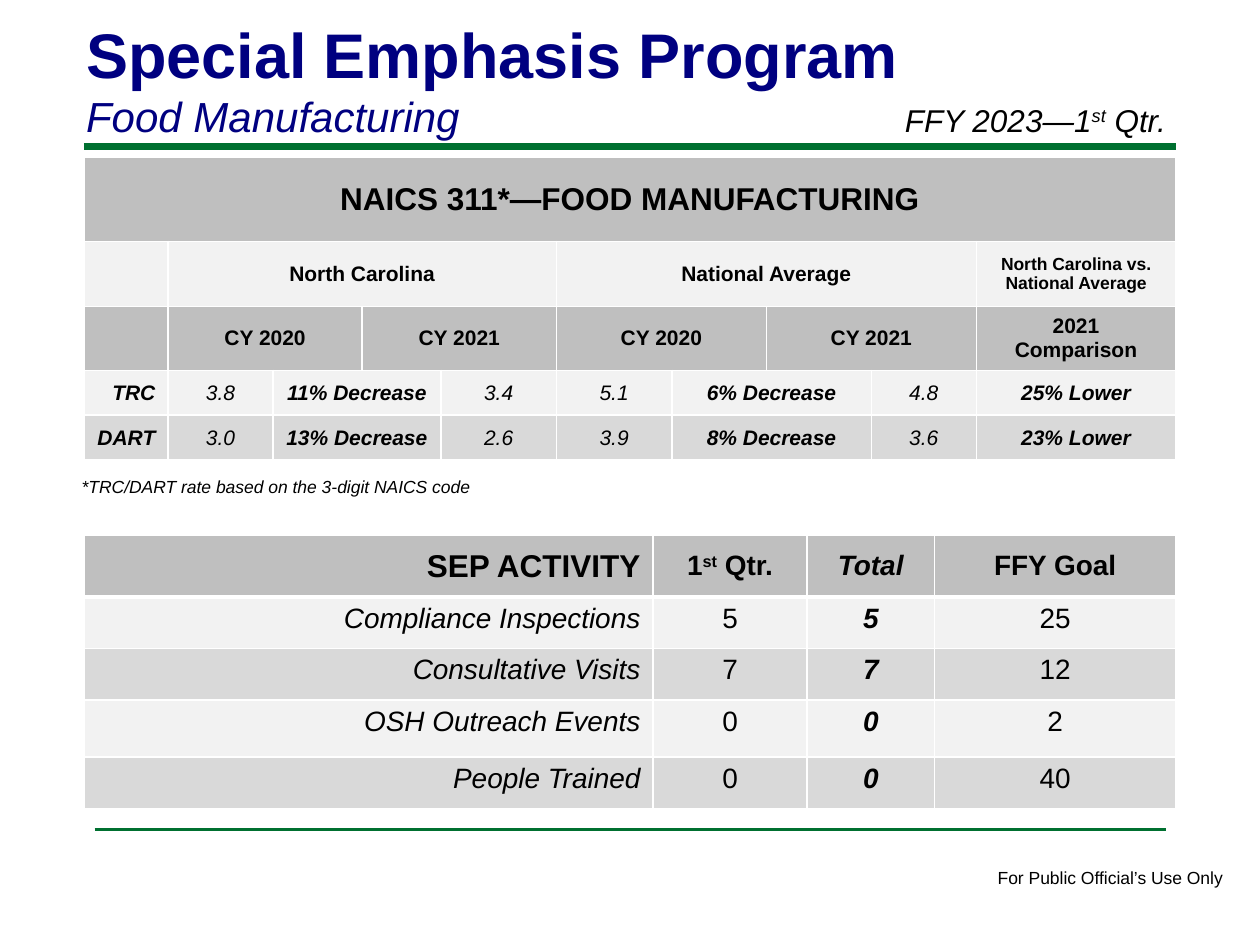
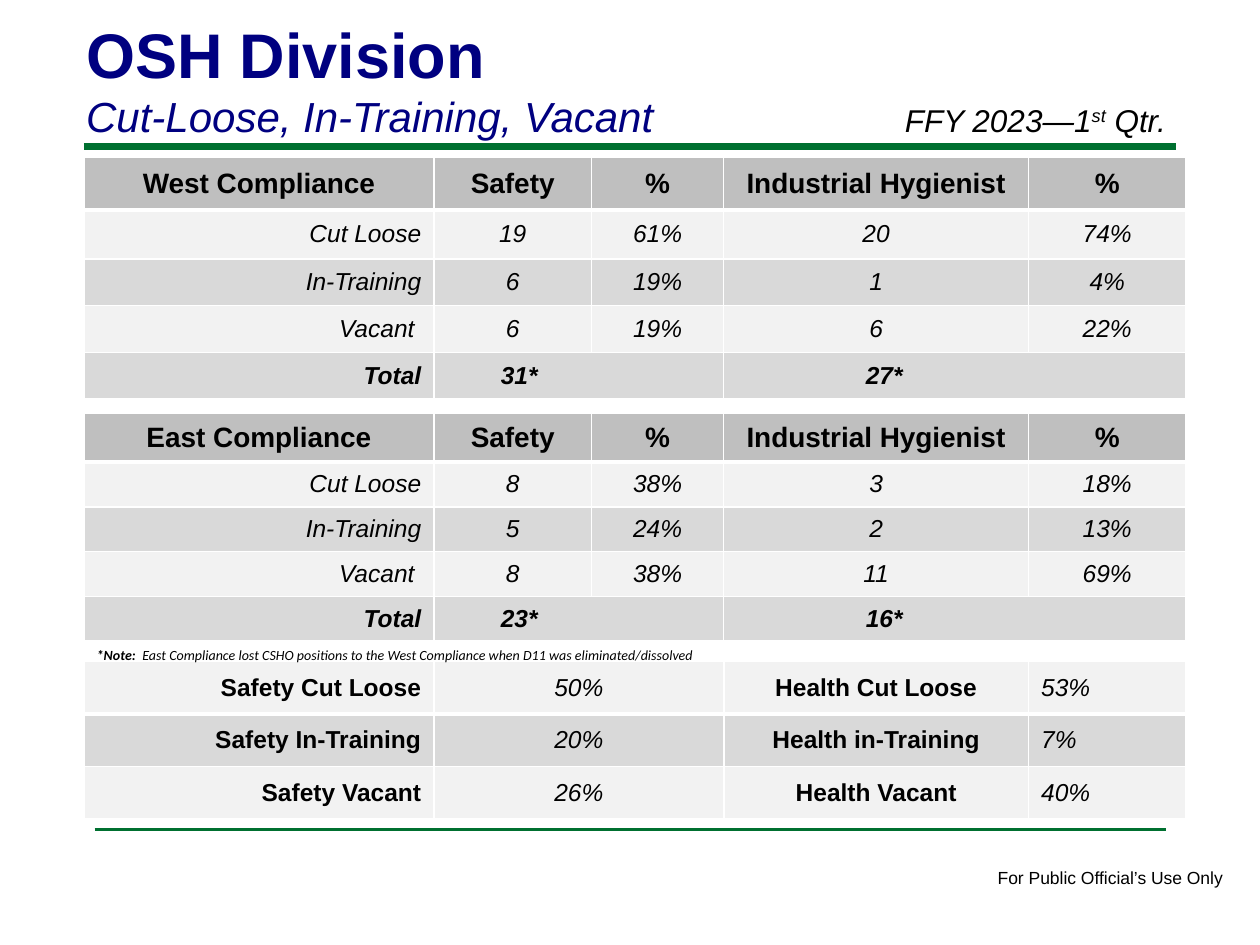
from dataclasses import dataclass
from typing import Optional

import lxml.etree
import pptx
import pptx.dml.color
import pptx.enum.shapes
import pptx.enum.text
import pptx.oxml.ns
import pptx.presentation
import pptx.shapes.connector
import pptx.slide
import pptx.table
import pptx.text.text
import pptx.util

Pt = pptx.util.Pt
ALIGN = pptx.enum.text.PP_ALIGN
ANCHOR = pptx.enum.text.MSO_ANCHOR
qn = pptx.oxml.ns.qn

COLORS = {
    "navy": "000080",
    "green": "007030",
    "black": "000000",
    "white": "FFFFFF",
    "header": "BFBFBF",
    "light": "F2F2F2",
    "mid": "D9D9D9",
}
BODY_FONT = "Arial"
NOTE_FONT = "Calibri"
TABLE_LEFT = 48
CELL_INSET = 7.2


@dataclass(frozen=True)
class Style:
    size: float
    bold: bool = False
    italic: bool = False
    color: str = "black"
    font: str = BODY_FONT


@dataclass(frozen=True)
class Rule:
    left: float
    right: float
    y: float
    width: float


@dataclass(frozen=True)
class Label:
    left: float
    top: float
    width: float
    height: float
    pieces: list[tuple[str, Style]]
    wrap: bool = False


@dataclass(frozen=True)
class Cell:
    text: str
    style: Style
    align: Optional[ALIGN] = ALIGN.CENTER
    span: int = 1
    indent: float = 0
    anchor: ANCHOR = ANCHOR.MIDDLE


@dataclass(frozen=True)
class Grid:
    top: float
    columns: list[float]
    heights: list[float]
    fills: list[str]
    rows: list[list[Cell]]
    heavy_first_row: bool = True


RULES = [Rule(48, 672, 84, 4), Rule(54, 666, 474, 2)]
SHARED_LABELS = [
    Label(563, 492, 145, 19.4, [("For Public Official’s Use Only", Style(10))]),
    Label(510, 54, 180, 29, [("FFY 2023—1^st^ Qtr.", Style(18, italic=True))], True),
]
TITLE = Style(36, bold=True, color="navy")
SUBTITLE = Style(24, italic=True, color="navy")


def rgb(name: str) -> pptx.dml.color.RGBColor:
    return pptx.dml.color.RGBColor.from_string(COLORS[name])


def add_text(paragraph: pptx.text.text._Paragraph, text: str, style: Style) -> None:
    for index, part in enumerate(text.split("^")):
        run = paragraph.add_run()
        run.text = part
        run.font.name = style.font
        run.font.size = Pt(style.size)
        run.font.bold = style.bold
        run.font.italic = style.italic
        run.font.color.rgb = rgb(style.color)
        if index % 2:
            run._r.get_or_add_rPr().set("baseline", "30000")


def add_rule(slide: pptx.slide.Slide, rule: Rule) -> None:
    connector = slide.shapes.add_connector(
        pptx.enum.shapes.MSO_CONNECTOR.STRAIGHT,
        Pt(rule.left), Pt(rule.y), Pt(rule.right), Pt(rule.y),
    )
    connector.line.color.rgb = rgb("green")
    connector.line.width = Pt(rule.width)
    lxml.etree.SubElement(connector._element.spPr, qn("a:effectLst"))


def add_label(slide: pptx.slide.Slide, label: Label) -> None:
    shape = slide.shapes.add_textbox(
        Pt(label.left), Pt(label.top), Pt(label.width), Pt(label.height)
    )
    shape.text_frame.word_wrap = label.wrap
    for text, style in label.pieces:
        add_text(shape.text_frame.paragraphs[0], text, style)


def set_borders(cell: pptx.table._Cell, widths: dict[str, float]) -> None:
    properties = cell._tc.get_or_add_tcPr()
    for position, (side, width) in enumerate(widths.items()):
        line = lxml.etree.Element(qn(f"a:{side}"), w=str(Pt(width)))
        fill = lxml.etree.SubElement(line, qn("a:solidFill"))
        lxml.etree.SubElement(fill, qn("a:srgbClr"), val=COLORS["white"])
        properties.insert(position, line)


def fill_cell(cell: pptx.table._Cell, content: Cell) -> None:
    cell.vertical_anchor = content.anchor
    cell.margin_left = Pt(CELL_INSET + content.indent)
    paragraph = cell.text_frame.paragraphs[0]
    paragraph.alignment = content.align
    if content.text:
        add_text(paragraph, content.text, content.style)


def add_grid(slide: pptx.slide.Slide, grid: Grid) -> None:
    frame = slide.shapes.add_table(
        len(grid.heights), len(grid.columns), Pt(TABLE_LEFT), Pt(grid.top),
        Pt(sum(grid.columns)), Pt(sum(grid.heights)),
    )
    table = frame.table
    table.first_row = grid.heavy_first_row
    for column, width in zip(table.columns, grid.columns):
        column.width = Pt(width)
    for row_index, contents in enumerate(grid.rows):
        table.rows[row_index].height = Pt(grid.heights[row_index])
        top = 3 if grid.heavy_first_row and row_index == 1 else 1
        bottom = 3 if grid.heavy_first_row and row_index == 0 else 1
        for cell in table.rows[row_index].cells:
            cell.fill.solid()
            cell.fill.fore_color.rgb = rgb(grid.fills[row_index])
            set_borders(cell, {"lnL": 1, "lnR": 1, "lnT": top, "lnB": bottom})
        column_index = 0
        for content in contents:
            cell = table.cell(row_index, column_index)
            fill_cell(cell, content)
            column_index += content.span
            if content.span > 1:
                cell.merge(table.cell(row_index, column_index - 1))
        for cell in table.rows[row_index].cells:
            if not cell.text:
                paragraph = cell.text_frame.paragraphs[0]
                lxml.etree.SubElement(paragraph._p, qn("a:endParaRPr"), sz="1200")


def add_report_slide(
    presentation: pptx.presentation.Presentation,
    heading: str, subject: str, grids: list[Grid], labels: list[Label],
) -> None:
    slide = presentation.slides.add_slide(presentation.slide_layouts[5])
    for rule in RULES:
        add_rule(slide, rule)
    title = slide.shapes.title
    title.left, title.top, title.width, title.height = Pt(42), Pt(4.3), Pt(594), Pt(80)
    frame = title.text_frame
    frame.auto_size = pptx.enum.text.MSO_AUTO_SIZE.NONE
    frame.vertical_anchor = ANCHOR.BOTTOM
    paragraphs = [frame.paragraphs[0], frame.add_paragraph()]
    for paragraph, text, style in zip(paragraphs, (heading, subject), (TITLE, SUBTITLE)):
        paragraph.alignment = ALIGN.LEFT
        add_text(paragraph, text, style)
    for grid in grids:
        add_grid(slide, grid)
    for label in SHARED_LABELS + labels:
        add_label(slide, label)


def rates_grid() -> Grid:
    bold = Style(12, bold=True)
    strong = Style(12, bold=True, italic=True)
    plain = Style(12, italic=True)
    blank = Cell("", bold)

    def rate_row(name: str, state: list[str], nation: list[str], comparison: str) -> list[Cell]:
        row = [Cell(name, strong, ALIGN.RIGHT)]
        for before, change, after in (state, nation):
            row += [Cell(before, plain), Cell(change, strong, span=2), Cell(after, plain)]
        return row + [Cell(comparison, strong)]

    years = [Cell(year, bold, span=2) for year in ("CY 2020", "CY 2021")]
    rows = [
        [Cell("NAICS 311*—FOOD MANUFACTURING", Style(18, bold=True), span=10)],
        [
            blank,
            Cell("North Carolina", bold, span=4),
            Cell("National Average", bold, span=4),
            Cell("North Carolina vs. National Average", Style(10, bold=True)),
        ],
        [blank, *years, *years, Cell("2021 Comparison", bold)],
        rate_row("TRC", ["3.8", "11% Decrease", "3.4"], ["5.1", "6% Decrease", "4.8"], "25% Lower"),
        rate_row("DART", ["3.0", "13% Decrease", "2.6"], ["3.9", "8% Decrease", "3.6"], "23% Lower"),
    ]
    return Grid(
        90, [48, 60, 51, 45, 66, 66, 54, 60, 60, 114], [48, 37.2, 36.4, 25.7, 25.7],
        ["header", "light", "header", "light", "mid"], rows, heavy_first_row=False,
    )


def activity_grid() -> Grid:
    bold = Style(16, bold=True)
    strong = Style(16, bold=True, italic=True)
    rows = [[
        Cell("SEP ACTIVITY", Style(18, bold=True), ALIGN.RIGHT),
        Cell("1^st^ Qtr.", bold), Cell("Total", strong), Cell("FFY Goal", bold),
    ]]
    for name, quarter, total, goal in (
        ("Compliance Inspections", "5", "5", "25"),
        ("Consultative Visits", "7", "7", "12"),
        ("OSH Outreach Events", "0", "0", "2"),
        ("People Trained", "0", "0", "40"),
    ):
        rows.append([
            Cell(name, Style(16, italic=True), ALIGN.RIGHT, anchor=ANCHOR.TOP),
            Cell(quarter, Style(16), anchor=ANCHOR.TOP),
            Cell(total, strong, anchor=ANCHOR.TOP),
            Cell(goal, Style(16), anchor=ANCHOR.TOP),
        ])
    return Grid(
        306, [325.2, 88, 72.8, 138], [35.1, 29.4, 29.4, 32.6, 29.4],
        ["header", "light", "mid", "light", "mid"], rows,
    )


def compliance_grid(
    region: str, top: float, heights: list[float], counts: list[list[str]], totals: list[str]
) -> Grid:
    plain = Style(14, italic=True)
    strong = Style(14, bold=True, italic=True)
    headings = [f"{region} Compliance", "Safety", "%", "Industrial Hygienist", "%"]
    rows = [[Cell(text, Style(16, bold=True)) for text in headings]]
    for name, values in zip(("Cut Loose", "In-Training", "Vacant "), counts):
        rows.append([Cell(name, plain, ALIGN.RIGHT)] + [Cell(value, plain) for value in values])
    rows.append([Cell("Total", strong, ALIGN.RIGHT)] + [
        Cell(total, strong, ALIGN.LEFT, 2, indent) for total, indent in zip(totals, (31, 74))
    ])
    return Grid(
        top, [200, 90, 75.6, 174.2, 90], heights,
        ["header", "light", "mid", "light", "mid"], rows,
    )


def share_grid() -> Grid:
    bold = Style(14, bold=True)
    plain = Style(14, italic=True)
    rows = [
        [
            Cell(f"Safety {safety_status}", bold, ALIGN.RIGHT), Cell(safety, plain),
            Cell(f"Health {health_status}", bold), Cell(health, plain, ALIGN.LEFT),
        ]
        for safety_status, safety, health_status, health in (
            ("Cut Loose", "50%", "Cut Loose", "53%"),
            ("In-Training", "20%", "in-Training", "7%"),
            ("Vacant", "26%", "Vacant", "40%"),
        )
    ]
    return Grid(378, [200, 165.6, 174.2, 90], [30] * 3, ["light", "mid", "light"], rows)


def main() -> None:
    presentation = pptx.Presentation()
    presentation.slide_width, presentation.slide_height = Pt(720), Pt(540)
    rate_note = Label(39.6, 268.6, 243.4, 19.4, [
        ("*TRC/DART rate based on the 3-digit NAICS code", Style(10, italic=True)),
    ])
    add_report_slide(
        presentation, "Special Emphasis Program", "Food Manufacturing",
        [activity_grid(), rates_grid()], [rate_note],
    )
    west = compliance_grid(
        "West", 90, [30, 28, 26.7, 26.7, 26.7],
        [["19", "61%", "20", "74%"], ["6", "19%", "1", "4%"], ["6", "19%", "6", "22%"]],
        ["31*", "27*"],
    )
    east = compliance_grid(
        "East", 236, [28] + [25.6] * 4,
        [["8", "38%", "3", "18%"], ["5", "24%", "2", "13%"], ["8", "38%", "11", "69%"]],
        ["23*", "16*"],
    )
    transfer_note = Label(48.2, 365.8, 360.7, 17, [
        ("*Note:  ", Style(8, True, True, font=NOTE_FONT)),
        ("East Compliance lost CSHO positions to the West Compliance when D11 was eliminated/dissolved",
         Style(8, italic=True, font=NOTE_FONT)),
    ])
    add_report_slide(
        presentation, "OSH Division", "Cut-Loose, In-Training, Vacant",
        [west, share_grid(), east], [transfer_note],
    )
    presentation.save("out.pptx")


if __name__ == "__main__":
    main()
